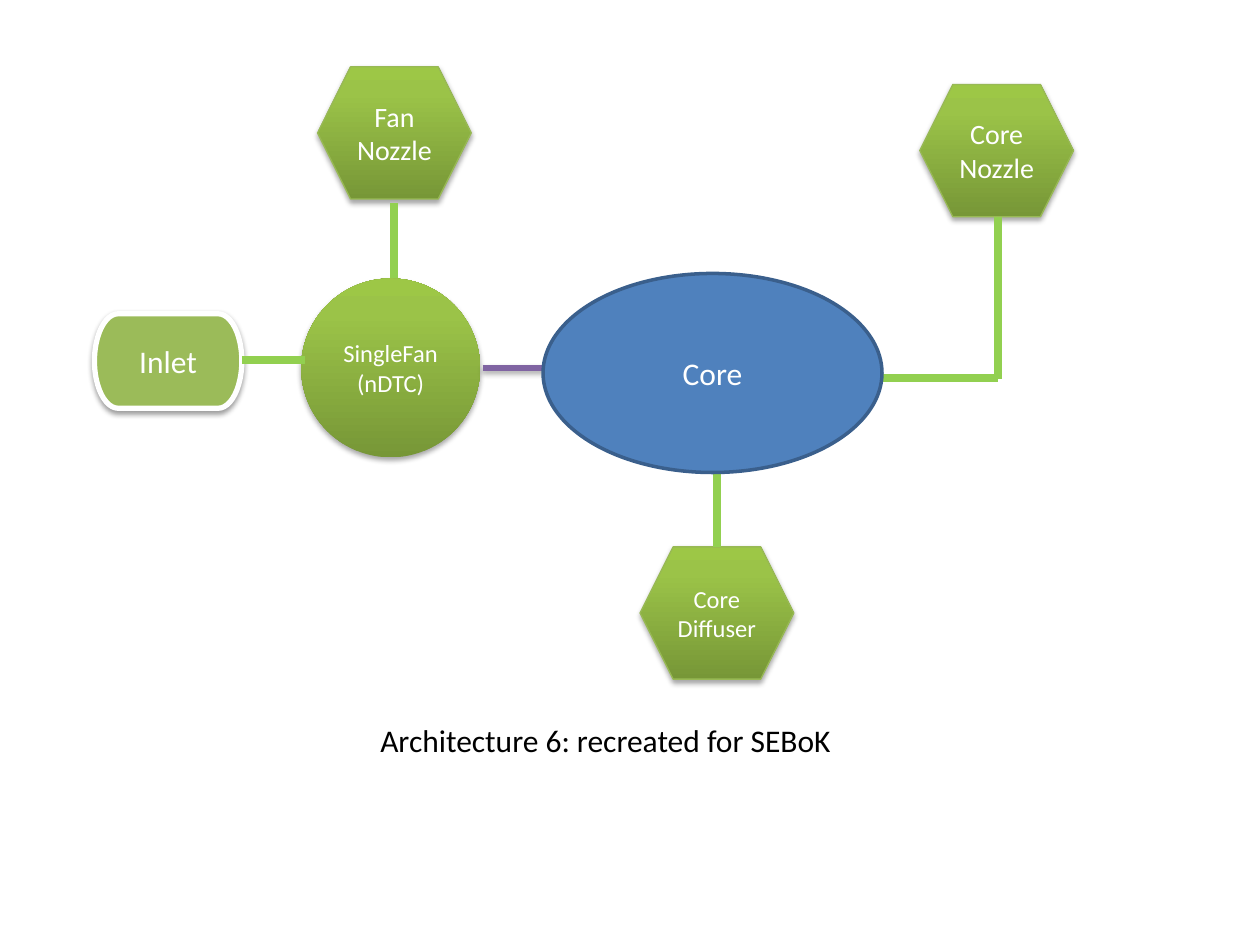
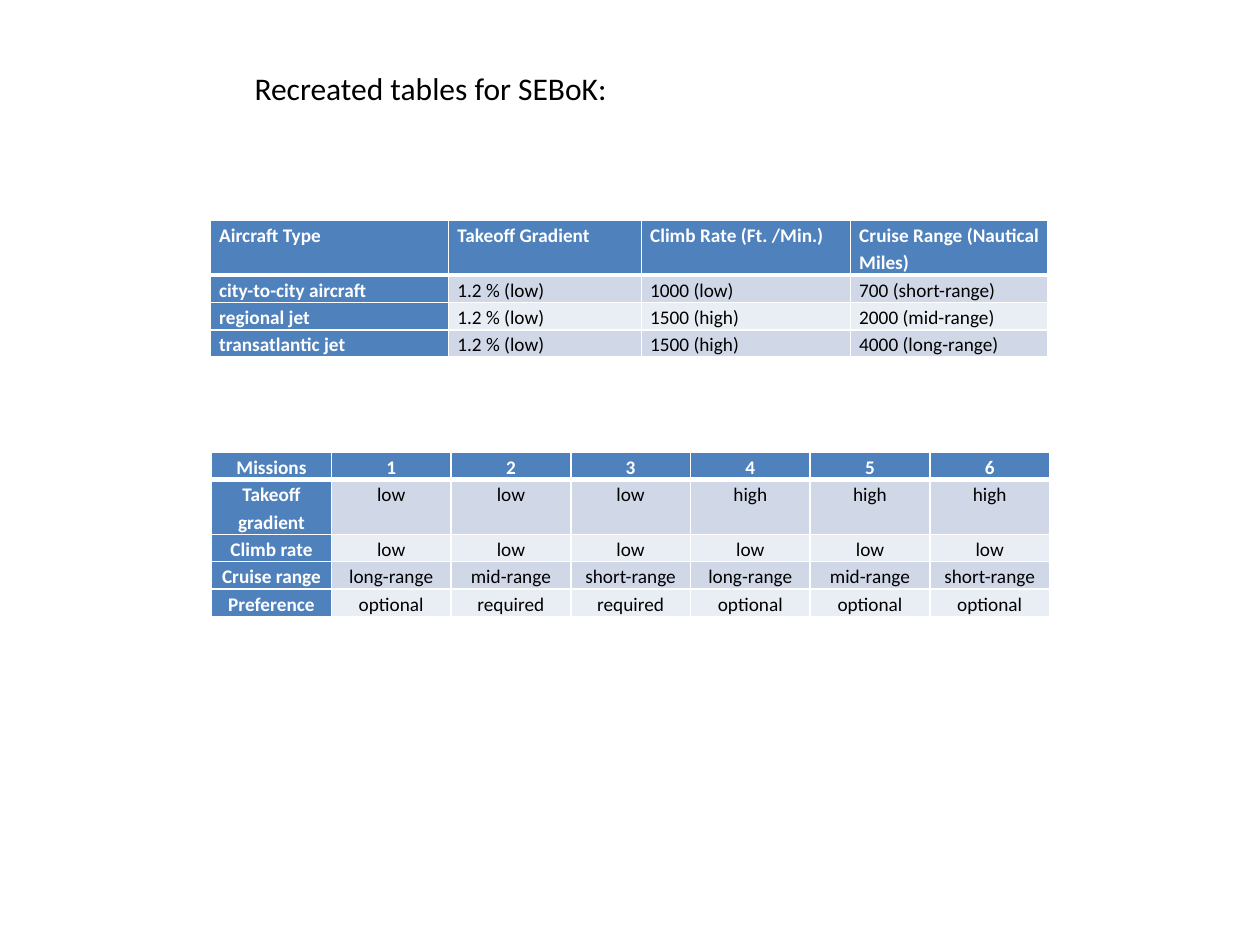
from copy import deepcopy

from lxml import etree
from pptx import Presentation
from pptx.dml.color import RGBColor
from pptx.enum.shapes import MSO_CONNECTOR, MSO_SHAPE
from pptx.enum.text import MSO_ANCHOR, MSO_AUTO_SIZE, PP_ALIGN
from pptx.oxml.ns import qn
from pptx.util import Inches, Pt

# Shared style
FONT = "Calibri"
WHITE = RGBColor(0xFF, 0xFF, 0xFF)
BLACK = RGBColor(0, 0, 0)
BLUE = RGBColor(0x4F, 0x81, 0xBD)
DARK_BLUE = RGBColor(0x3A, 0x5F, 0x8C)
GREEN = RGBColor(0x9B, 0xBB, 0x59)
EDGE_GREEN = RGBColor(0x98, 0xB9, 0x55)
LINK_GREEN = RGBColor(0x92, 0xD0, 0x50)
PURPLE = RGBColor(0x80, 0x64, 0xA2)
BANDS = (RGBColor(0xD0, 0xD8, 0xE8), RGBColor(0xE9, 0xED, 0xF4))
GREEN_FADE = (
    (0, RGBColor(0x77, 0x97, 0x37)),
    (0.8, RGBColor(0x9B, 0xC3, 0x48)),
    (1, RGBColor(0x9D, 0xC7, 0x46)),
)

# Slide 1: engine architecture
CAPTION = ("Architecture 6: recreated for SEBoK", (2.92, 5.67, 4.83, 0.4))
HEXAGON_SIZE = (1.22, 1.05)
NOZZLES = [  # label, left, top, text size
    ("Fan\nNozzle", 2.52, 0.53, 16),
    ("Core\nNozzle", 7.3, 0.67, 16),
    ("Core\nDiffuser", 5.08, 4.34, 14),
]
INLET = ("Inlet", (0.75, 2.49, 1.17, 0.75))
FAN = ("SingleFan\n(nDTC)", (2.39, 2.21, 1.42, 1.42))
CORE = ("Core", (4.31, 2.17, 2.69, 1.58))
FLOW_LINKS = [  # start x, start y, end x, end y
    (1.92, 2.86, 2.42, 2.86),
    (3.13, 1.61, 3.13, 2.21),
    (7, 3, 7.92, 3),
    (7.92, 1.72, 7.92, 3.01),
    (5.69, 3.75, 5.69, 4.34),
]
FAN_CORE_LINK = (3.83, 2.92, 4.33, 2.92)

# Slide 2: requirement tables
HEADING = ("Recreated tables for SEBoK:", (1.92, 0.5, 5.17, 0.4))
LINE_HEIGHT = 0.21
AIRCRAFT = {
    "at": (1.67, 1.75),
    "columns": [1.89, 1.53, 1.66, 1.57],
    "row_lines": [2, 1, 1, 1],
    "align": PP_ALIGN.LEFT,
    "rows": [
        ("Aircraft Type", "Takeoff Gradient", "Climb Rate (Ft. /Min.)",
         "Cruise Range (Nautical Miles)"),
        ("city-to-city aircraft", "1.2 % (low)", "1000 (low)", "700 (short-range)"),
        ("regional jet", "1.2 % (low)", "1500 (high)", "2000 (mid-range)"),
        ("transatlantic jet", "1.2 % (low)", "1500 (high)", "4000 (long-range)"),
    ],
}
RANGES = ("long-range", "mid-range", "short-range")
MISSIONS = {
    "at": (1.68, 3.59),
    "columns": [0.95] * 7,
    "row_lines": [1, 2, 1, 1, 1],
    "align": PP_ALIGN.CENTER,
    "rows": [
        ("Missions", "1", "2", "3", "4", "5", "6"),
        ("Takeoff gradient", "low", "low", "low", "high", "high", "high"),
        ("Climb rate", *["low"] * 6),
        ("Cruise range", *RANGES, *RANGES),
        ("Preference", "optional", "required", "required",
         "optional", "optional", "optional"),
    ],
}


def inches(values):
    return [Inches(value) for value in values]


def format_text(frame, size, color, align, bold=False):
    for paragraph in frame.paragraphs:
        paragraph.alignment = align
        for run in paragraph.runs:
            run.font.name = FONT
            run.font.size = Pt(size)
            run.font.bold = bold
            run.font.color.rgb = color


def write_heading(shape, text, box):
    shape.left, shape.top, shape.width, shape.height = inches(box)
    frame = shape.text_frame
    frame.text = text
    frame.word_wrap = True
    frame.auto_size = MSO_AUTO_SIZE.NONE
    frame.vertical_anchor = MSO_ANCHOR.TOP
    format_text(frame, 18, BLACK, PP_ALIGN.LEFT)


def add_shadow(effects, opacity, distance):
    shadow = etree.SubElement(
        effects, qn("a:outerShdw"), blurRad=str(Pt(3.1)), dist=str(Pt(distance)),
        dir="5400000", rotWithShape="0")
    color = etree.SubElement(shadow, qn("a:srgbClr"), val="000000")
    etree.SubElement(color, qn("a:alpha"), val=str(opacity * 1000))


def add_part(group, kind, label, box, size, line=None, line_width=0):
    part = group.shapes.add_shape(kind, *inches(box))
    part.shadow.inherit = False
    if line is None:
        part.line.fill.background()
    else:
        part.line.color.rgb = line
        part.line.width = Pt(line_width)
    part.text_frame.text = label
    part.text_frame.vertical_anchor = MSO_ANCHOR.MIDDLE
    format_text(part.text_frame, size, WHITE, PP_ALIGN.CENTER)
    return part


def shade_part(part, opacity, distance):
    add_shadow(part._element.spPr.find(qn("a:effectLst")), opacity, distance)


def fade_green(part):
    part.fill.gradient()
    part.fill.gradient_angle = 90
    stop_list = part._element.spPr.find(qn("a:gradFill")).find(qn("a:gsLst"))
    stop_list.append(deepcopy(stop_list[0]))
    for stop, (position, color) in zip(part.fill.gradient_stops, GREEN_FADE):
        stop.position = position
        stop.color.rgb = color
    shade_part(part, 35, 1.8)


def add_link(group, ends, color, width):
    link = group.shapes.add_connector(MSO_CONNECTOR.STRAIGHT, *inches(ends))
    link.line.color.rgb = color
    link.line.width = Pt(width)
    return etree.SubElement(link._element.spPr, qn("a:effectLst"))


def add_border(cell, side, width):
    border = etree.SubElement(cell._tc.get_or_add_tcPr(), qn("a:ln" + side),
                              w=str(Pt(width)))
    fill = etree.SubElement(border, qn("a:solidFill"))
    etree.SubElement(fill, qn("a:srgbClr"), val=str(WHITE))


def add_grid(slide, content):
    rows, columns = content["rows"], content["columns"]
    heights = [LINE_HEIGHT * lines for lines in content["row_lines"]]
    box = (*content["at"], sum(columns), sum(heights))
    grid = slide.shapes.add_table(len(rows), len(columns), *inches(box)).table
    for column, width in zip(grid.columns, columns):
        column.width = Inches(width)
    for r, (texts, height) in enumerate(zip(rows, heights)):
        grid.rows[r].height = Inches(height)
        for c, text in enumerate(texts):
            cell = grid.cell(r, c)
            is_header = r == 0 or c == 0
            cell.margin_left = cell.margin_right = Inches(0.07)
            cell.margin_top = cell.margin_bottom = 0
            for side in "LRTB":
                under_header = (r, side) in ((0, "B"), (1, "T"))
                add_border(cell, side, 3 if under_header else 1)
            cell.fill.solid()
            cell.fill.fore_color.rgb = BLUE if is_header else BANDS[(r - 1) % 2]
            cell.text_frame.text = text
            cell.text_frame.paragraphs[0].line_spacing = 1.15
            format_text(cell.text_frame, 11, WHITE if is_header else BLACK,
                        content["align"], is_header)


def build_architecture(deck):
    slide = deck.slides.add_slide(deck.slide_layouts[6])
    diagram = slide.shapes.add_group_shape()

    # Inlet, fan and nozzles
    inlet = add_part(diagram, MSO_SHAPE.FLOWCHART_TERMINATOR, *INLET, 18, WHITE, 3)
    inlet.fill.solid()
    inlet.fill.fore_color.rgb = GREEN
    shade_part(inlet, 38, 1.6)
    fade_green(add_part(diagram, MSO_SHAPE.OVAL, *FAN, 14))
    for label, left, top, size in NOZZLES:
        fade_green(add_part(diagram, MSO_SHAPE.HEXAGON, label,
                            (left, top, *HEXAGON_SIZE), size, EDGE_GREEN, 0.75))

    # Links, with the core over their ends
    for ends in FLOW_LINKS:
        add_link(diagram, ends, LINK_GREEN, 4.5)
    add_shadow(add_link(diagram, FAN_CORE_LINK, PURPLE, 3), 35, 1.8)
    core = add_part(diagram, MSO_SHAPE.OVAL, *CORE, 18, DARK_BLUE, 2)
    core.fill.solid()
    core.fill.fore_color.rgb = BLUE

    text, box = CAPTION
    write_heading(slide.shapes.add_textbox(*inches(box)), text, box)


def build_tables(deck):
    slide = deck.slides.add_slide(deck.slide_layouts[5])
    write_heading(slide.shapes.title, *HEADING)
    for content in (MISSIONS, AIRCRAFT):
        add_grid(slide, content)


def main():
    deck = Presentation()
    deck.slide_width, deck.slide_height = Inches(10), Inches(7.5)
    build_architecture(deck)
    build_tables(deck)
    deck.save("out.pptx")


if __name__ == "__main__":
    main()
